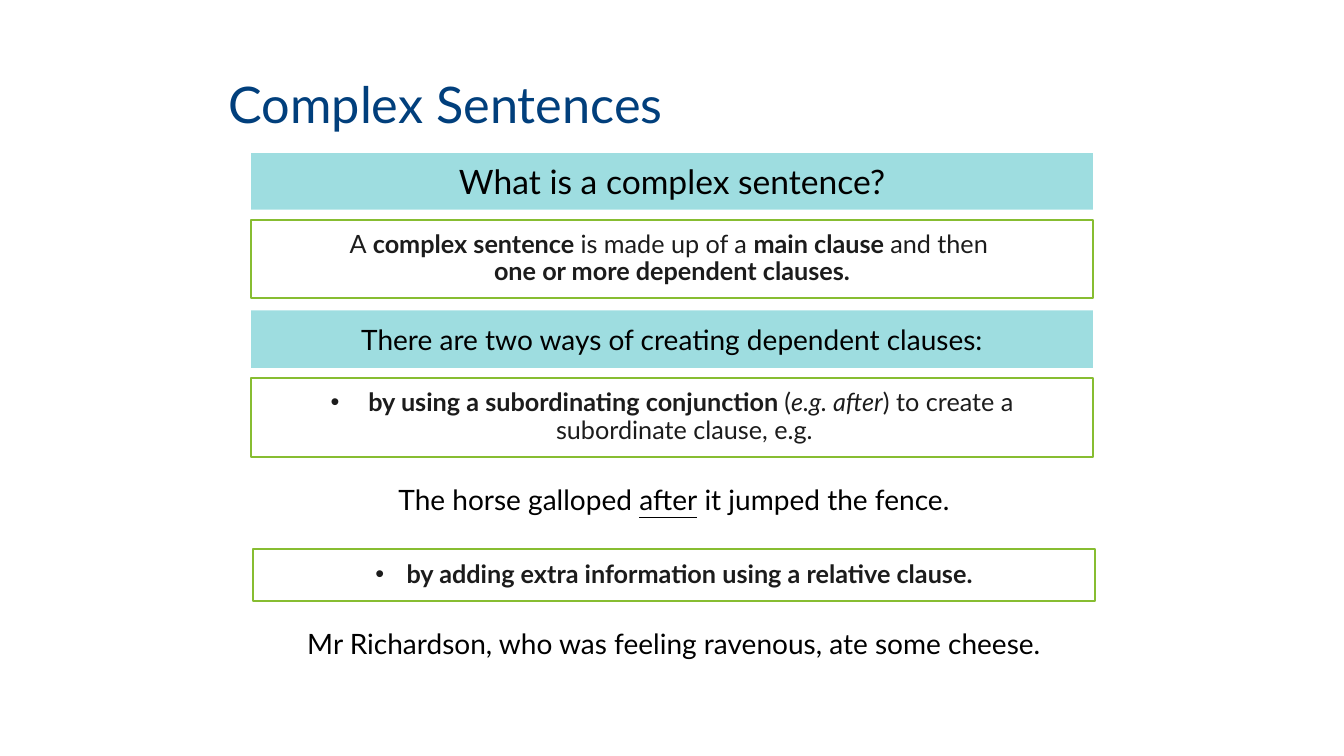
"""Builds a slide that explains complex sentences."""
from lxml.etree import SubElement
from pptx import Presentation
from pptx.dml.color import RGBColor
from pptx.enum.shapes import MSO_SHAPE
from pptx.enum.text import MSO_ANCHOR, PP_ALIGN
from pptx.oxml.ns import qn
from pptx.util import Inches, Pt

FONT = "Lato"
HEX = {"title": "013F7C", "band": "2DB6BC", "edge": "87BD31",
       "ink": "1C1C1C", "black": "000000", "white": "FFFFFF"}
TITLE = "Complex Sentences"
LEFT, SHIFT, WIDE = 2.49, 2.51, 8.35

# kind, left, top, height, size, bullet, lines of (text, style)
ROWS = [
    ("band", LEFT, 1.52, 0.56, 24, False, [[("What is a complex sentence?", "")]]),
    ("edge", LEFT, 2.18, 0.78, 18, False, [
        [("A", ""), (" complex sentence ", "b"), ("is made up of a ", ""),
         ("main clause ", "b"), ("and then ", "")],
        [("one or more dependent clauses.", "b")]]),
    ("band", LEFT, 3.08, 0.57, 20, False,
     [[("There are two ways of creating dependent clauses:", "")]]),
    ("edge", LEFT, 3.75, 0.78, 18, True, [
        [(" ", ""), ("by using a subordinating conjunction ", "b"), ("(", ""),
         ("e.g. after", "i"), (") to create a", "")],
        [("subordinate clause, e.g. ", "")]]),
    ("white", SHIFT, 4.67, 0.57, 20, False,
     [[("The horse galloped ", ""), ("after", "u"), (" it jumped the fence.", "")]]),
    ("edge", SHIFT, 5.45, 0.51, 18, True,
     [[("by adding extra information using a relative clause.", "b")]]),
    ("white", SHIFT, 6.1, 0.57, 20, False,
     [[("Mr Richardson, who was feeling ravenous, ate some cheese.", "")]]),
]


def color(name):
    """Return the named colour."""
    return RGBColor.from_string(HEX[name])


def style(para, size, name):
    """Set the font of a paragraph."""
    para.font.name, para.font.size = FONT, Pt(size)
    para.font.color.rgb = color(name)


def paint(box, kind):
    """Give a box its fill and edge."""
    box.shadow.inherit = False
    if kind == "edge":
        box.fill.background()
        box.line.color.rgb = color(kind)
        box.line.width = Pt(1.5)
        return
    box.line.fill.background()
    box.fill.solid()
    box.fill.fore_color.rgb = color(kind)
    if kind == "band":
        tint = box.fill._xPr.find(".//" + qn("a:srgbClr"))
        SubElement(tint, qn("a:alpha"), val="46000")


def bullet(para):
    """Add a hanging bullet."""
    props = para._p.get_or_add_pPr()
    props.set("marL", str(Inches(0.31)))
    props.set("indent", str(Inches(-0.31)))
    SubElement(props, qn("a:buFont"), typeface="Arial")
    SubElement(props, qn("a:buChar"), char="•")


def write(para, lines):
    """Write the lines of one paragraph."""
    for index, line in enumerate(lines):
        if index:
            para.add_line_break()
        for text, mark in line:
            run = para.add_run()
            run.text = text
            if mark == "b":
                run.font.bold = True
            elif mark == "i":
                run.font.italic = True
            elif mark == "u":
                run.font.underline = True


def add_row(slide, kind, left, top, high, size, dot, lines):
    """Add one box with its text."""
    box = slide.shapes.add_shape(MSO_SHAPE.RECTANGLE, Inches(left), Inches(top),
                                 Inches(WIDE), Inches(high))
    paint(box, kind)
    frame = box.text_frame
    frame.word_wrap = True
    frame.vertical_anchor = MSO_ANCHOR.MIDDLE
    frame.margin_left = frame.margin_right = Inches(0.12)
    frame.margin_top = frame.margin_bottom = Inches(0.08)
    para = frame.paragraphs[0]
    para.alignment = PP_ALIGN.CENTER
    if kind == "edge":
        para.line_spacing = 0.9
    if dot:
        bullet(para)
    style(para, size, "ink" if kind == "edge" else "black")
    write(para, lines)


def main():
    """Build and save the slide."""
    deck = Presentation()
    deck.slide_width, deck.slide_height = Inches(13.33), Inches(7.5)
    slide = deck.slides.add_slide(deck.slide_layouts[6])
    head = slide.shapes.add_textbox(Inches(2.17), Inches(0.52),
                                    Inches(8.99), Inches(1.09)).text_frame
    head.word_wrap = True
    head.vertical_anchor = MSO_ANCHOR.MIDDLE
    para = head.paragraphs[0]
    para.text, para.line_spacing = TITLE, 0.9
    style(para, 36, "title")
    for row in ROWS:
        add_row(slide, *row)
    deck.save("out.pptx")


if __name__ == "__main__":
    main()
